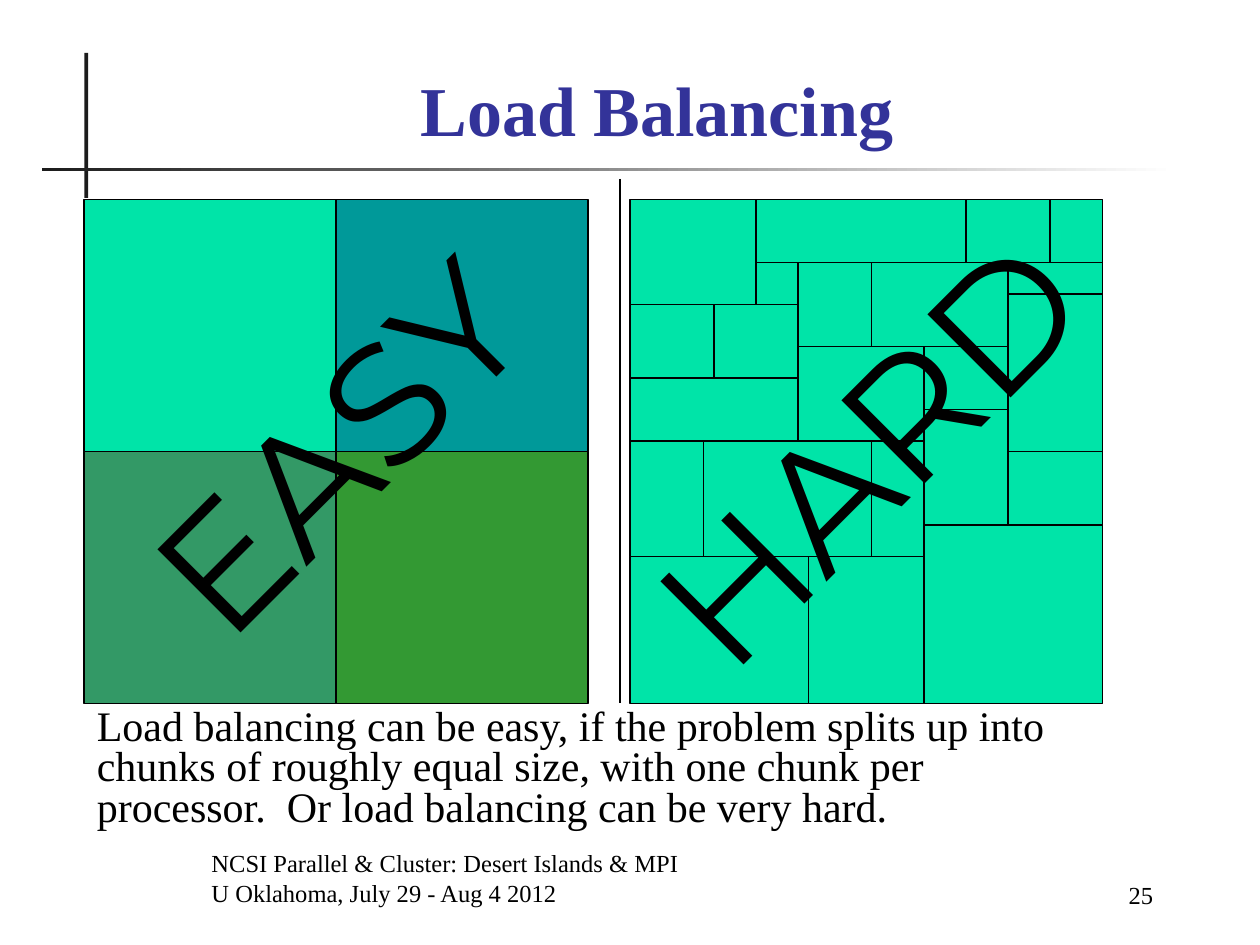
from pptx import Presentation
from pptx.dml.color import RGBColor
from pptx.enum.shapes import MSO_CONNECTOR, MSO_SHAPE
from pptx.enum.text import MSO_ANCHOR, PP_ALIGN
from pptx.oxml.ns import qn
from pptx.util import Inches, Pt
from lxml import etree

# Content
TITLE = "Load Balancing"
BODY = ("Load balancing can be easy, if the problem splits up into chunks of "
        "roughly equal size, with one chunk per processor.  Or load balancing "
        "can be very hard.")
FOOTER = "NCSI Parallel & Cluster: Desert Islands & MPI\nU Oklahoma, July 29 - Aug 4 2012"
PAGE = "25"
# Rotated word: left, top, width, height
VERDICTS = [("EASY", (0.5, 2.67, 4.33, 1.7)), ("HARD", (4.65, 2.71, 4.44, 1.7))]
EASY_COLORS = [["00E4A8", "009999"], ["339966", "339933"]]
# Uneven chunks: column, row, width, height in grid units
HARD_CHUNKS = [
    (0, 0, 12, 10), (12, 0, 20, 6), (32, 0, 8, 6), (40, 0, 5, 6),
    (12, 6, 4, 4), (16, 6, 7, 8), (23, 6, 13, 8), (36, 6, 9, 3),
    (0, 10, 8, 7), (8, 10, 8, 7), (36, 9, 9, 15), (16, 14, 12, 9),
    (28, 14, 8, 6), (0, 17, 16, 6), (28, 20, 8, 11), (36, 24, 9, 7),
    (0, 23, 7, 11), (7, 23, 16, 11), (23, 23, 5, 11), (28, 31, 17, 17),
    (0, 34, 17, 14), (17, 34, 11, 14),
]

THEME = {
    "serif": "Times New Roman", "sans": "Montserrat",
    "title": "333399", "ink": "000000", "rule": "1C1C1C", "paper": "FFFFFF",
    "chunk": "00E4A8", "outline": 0.75,
    "title_size": 40, "body_size": 24, "footer_size": 14, "verdict_size": 96,
}
UNIT = 1 / 12  # grid unit of the uneven chunks, in inches
TOP = 19 * UNIT
EASY_LEFT, HARD_LEFT, EASY_SIDE = 8 * UNIT, 5, 2


def rgb(name):
    return RGBColor.from_string(THEME.get(name, name))


def add_rect(slide, box, fill=None, outlined=True):
    rect = slide.shapes.add_shape(MSO_SHAPE.RECTANGLE, *map(Inches, box))
    rect.shadow.inherit = False
    if fill:
        rect.fill.solid()
        rect.fill.fore_color.rgb = rgb(fill)
    if outlined:
        rect.line.color.rgb = rgb("ink")
        rect.line.width = Pt(THEME["outline"])
    else:
        rect.line.fill.background()
    return rect


def add_text(slide, text, box, size, font="serif", color="ink", bold=False,
             align=PP_ALIGN.LEFT, anchor=MSO_ANCHOR.TOP, spacing=None):
    holder = slide.shapes.add_textbox(*map(Inches, box))
    frame = holder.text_frame
    frame.word_wrap = True
    frame.vertical_anchor = anchor
    frame.text = text
    for paragraph in frame.paragraphs:
        paragraph.alignment = align
        if spacing:
            paragraph.line_spacing = spacing
        for run in paragraph.runs:
            run.font.name = THEME[font]
            run.font.size = Pt(THEME[size])
            run.font.bold = bold
            run.font.color.rgb = rgb(color)
    return holder


def main():
    deck = Presentation()
    deck.slide_width, deck.slide_height = Inches(10), Inches(7.5)
    slide = deck.slides.add_slide(deck.slide_layouts[6])

    # Crossed rules beside and under the title
    add_rect(slide, (0.67, 0.42, 0.03, 1.15), "rule", outlined=False)
    fading_rule = add_rect(slide, (0.33, 1.33, 9, 0.03), outlined=False)
    fading_rule.fill.gradient()
    fading_rule.fill.gradient_angle = 0
    for stop, position, color in zip(fading_rule.fill.gradient_stops, (0, 1), ("rule", "paper")):
        stop.position = position
        stop.color.rgb = rgb(color)

    # Title and footer
    add_text(slide, TITLE, (0.83, 0.5, 8.77, 0.74), "title_size", color="title",
             bold=True, align=PP_ALIGN.CENTER, anchor=MSO_ANCHOR.BOTTOM)
    add_text(slide, FOOTER, (1.58, 6.75, 6.08, 0.5), "footer_size", anchor=MSO_ANCHOR.BOTTOM)
    add_text(slide, PAGE, (7.83, 6.77, 1.42, 0.5), "footer_size",
             align=PP_ALIGN.RIGHT, anchor=MSO_ANCHOR.BOTTOM)

    # Easy: four equal chunks
    for row, colors in enumerate(EASY_COLORS):
        for column, color in enumerate(colors):
            add_rect(slide, (EASY_LEFT + column * EASY_SIDE, TOP + row * EASY_SIDE,
                             EASY_SIDE, EASY_SIDE), color)

    # Divider
    divider = slide.shapes.add_connector(
        MSO_CONNECTOR.STRAIGHT, *map(Inches, (4.92, 1.42, 4.92, 5.58)))
    divider.line.color.rgb = rgb("ink")
    divider.line.width = Pt(THEME["outline"])
    etree.SubElement(divider.element.spPr, qn("a:effectLst"))

    # Hard: uneven chunks
    for column, row, width, height in HARD_CHUNKS:
        add_rect(slide, (HARD_LEFT + column * UNIT, TOP + row * UNIT,
                         width * UNIT, height * UNIT), "chunk")

    # Explanation and rotated verdicts
    add_text(slide, BODY, (0.67, 5.58, 8.17, 1.07), "body_size", spacing=0.8)
    for word, box in VERDICTS:
        verdict = add_text(slide, word, box, "verdict_size", font="sans", align=PP_ALIGN.CENTER)
        verdict.rotation = 315

    deck.save("out.pptx")


if __name__ == "__main__":
    main()
